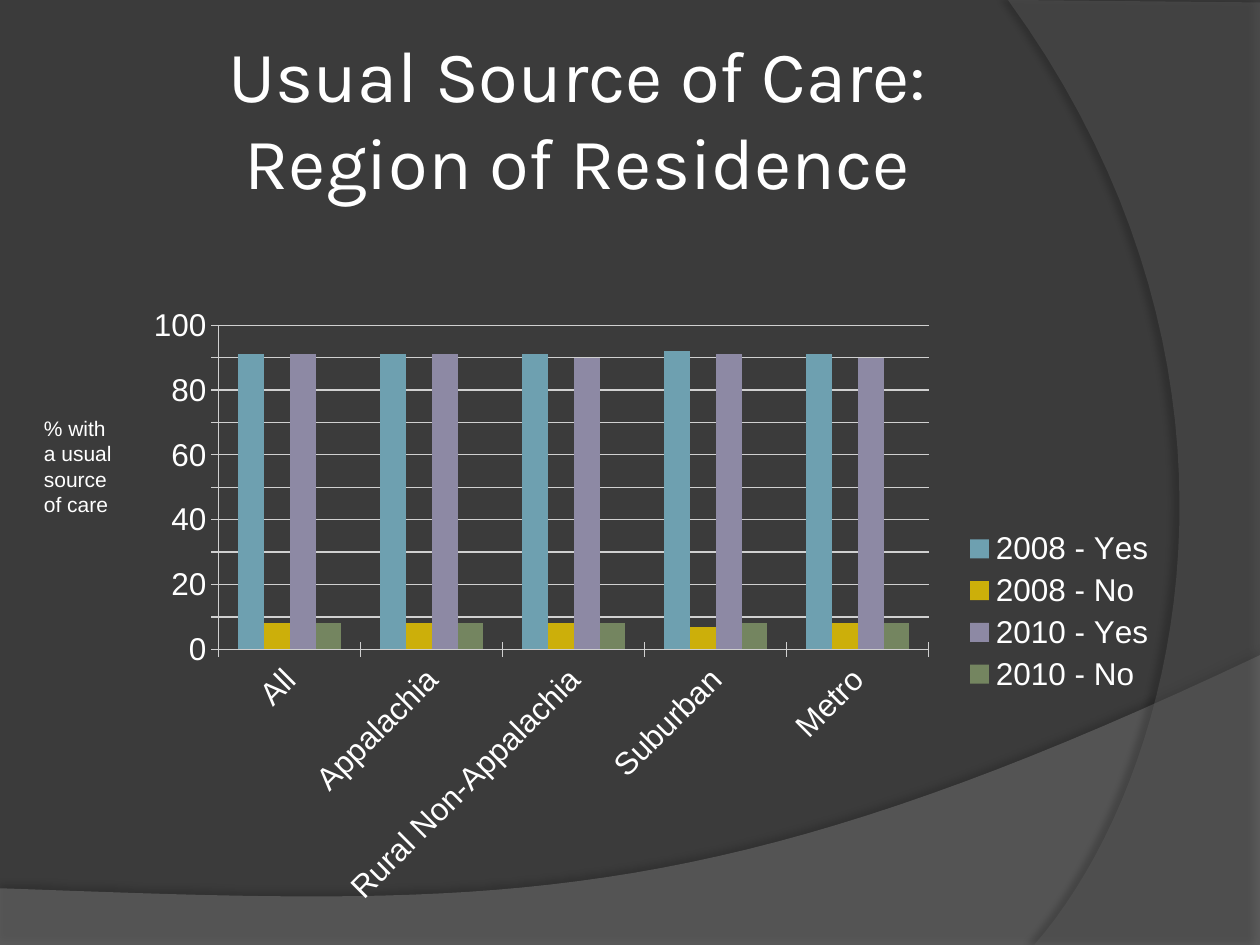
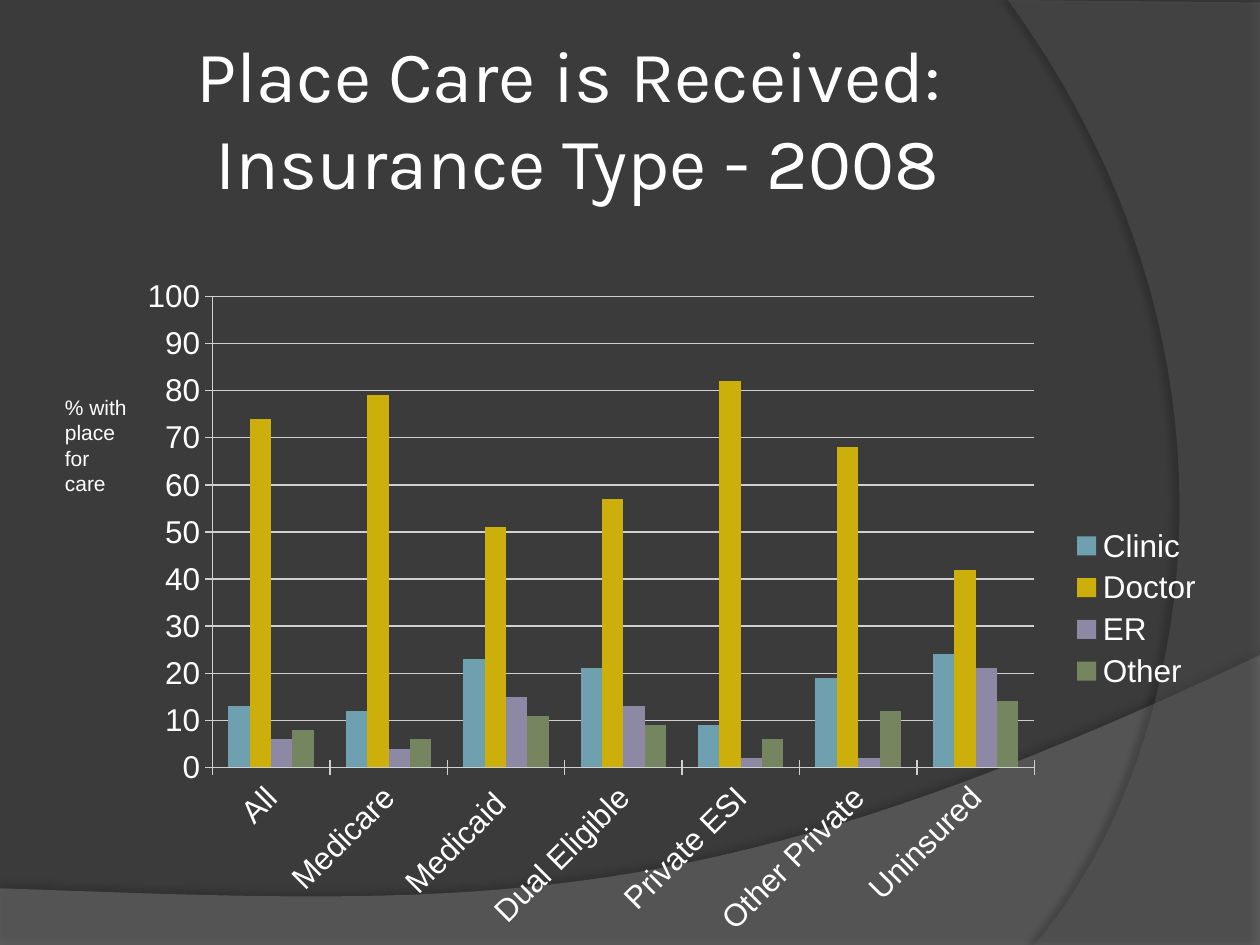
"""Build two slides of clustered column charts about sources of care."""
from lxml import etree
from pptx import Presentation
from pptx.chart.data import CategoryChartData
from pptx.dml.color import RGBColor
from pptx.enum.chart import XL_CHART_TYPE, XL_LEGEND_POSITION, XL_TICK_MARK
from pptx.enum.text import MSO_ANCHOR, MSO_AUTO_SIZE, PP_ALIGN
from pptx.oxml.ns import qn
from pptx.util import Inches, Pt

COLUMNS = XL_CHART_TYPE.COLUMN_CLUSTERED
LEGEND_RIGHT = XL_LEGEND_POSITION.RIGHT
TICK_CROSS = XL_TICK_MARK.CROSS
MIDDLE, TOP = MSO_ANCHOR.MIDDLE, MSO_ANCHOR.TOP
CENTER, LEFT = PP_ALIGN.CENTER, PP_ALIGN.LEFT
GROW, FIXED = MSO_AUTO_SIZE.SHAPE_TO_FIT_TEXT, MSO_AUTO_SIZE.NONE

GRID_PER_INCH = 12
CURVE_STEPS = 40
BACKGROUND, WHITE, AXIS_LINE = "3B3B3B", "FFFFFF", "D0D0D0"
SERIES_COLORS = ["6EA0B0", "CCAF0A", "8D89A4", "748560"]
TITLE_FONT, BODY_FONT = "Karla", "Arial"


def color(hex_value):
    return RGBColor.from_string(hex_value)


def grid(*units):
    return [Inches(unit / GRID_PER_INCH) for unit in units]


def bezier(start, first, second, end):
    for step in range(1, CURVE_STEPS + 1):
        t = step / CURVE_STEPS
        weights = ((1 - t) ** 3, 3 * t * (1 - t) ** 2, 3 * t * t * (1 - t), t ** 3)
        yield tuple(sum(w * p[axis] for w, p in zip(weights, (start, first, second, end)))
                    for axis in (0, 1))


def add_xml(parent, tag, **attributes):
    return etree.SubElement(parent, qn(tag), {k: str(v) for k, v in attributes.items()})


def set_layout(part, index, **shares):
    for old in part.findall(qn("c:layout")):
        part.remove(old)
    layout = etree.Element(qn("c:layout"))
    manual = add_xml(layout, "c:manualLayout")
    if "w" in shares:
        add_xml(manual, "c:layoutTarget", val="inner")
    for side in "xy":
        add_xml(manual, f"c:{side}Mode", val="edge")
    for side, share in shares.items():
        add_xml(manual, f"c:{side}", val=share)
    part.insert(index, layout)


class Deck:
    """Holds the shared style and the slide being built."""

    def __init__(self):
        self.prs = Presentation()
        self.prs.slide_width, self.prs.slide_height = grid(120, 90)
        self.slide = None

    def new_slide(self):
        self.slide = self.prs.slides.add_slide(self.prs.slide_layouts[6])
        backdrop = self.slide.background.fill
        backdrop.solid()
        backdrop.fore_color.rgb = color(BACKGROUND)
        wave_start, wave_end = (120, 62.4), (0, 84.6)
        wave = bezier(wave_start, (67.1, 87.5), (46.9, 86.3), wave_end)
        self.band([wave_end, (0, 90), (120, 90), wave_start, *wave],
                  "7F7F7F", 45, shade=35, distance=3.5, direction=270)
        arc_start, arc_end = (98.5, 90), (96, 0)
        arc = bezier(arc_start, (112.2, 74.3), (122.2, 36), arc_end)
        self.band([(120, 0.24), (120, 90), arc_start, *arc],
                  "5E5E5E", 40, shade=45, distance=4, direction=180)

    def band(self, outline, fill, opacity, shade, distance, direction):
        start, *rest = [grid(*point) for point in outline]
        builder = self.slide.shapes.build_freeform(*start, scale=1.0)
        builder.add_line_segments(rest, close=True)
        band = builder.convert_to_shape()
        band.fill.solid()
        band.fill.fore_color.rgb = color(fill)
        band.line.fill.background()
        band.shadow.inherit = False
        properties = band.element.spPr
        tint = properties.find(qn("a:solidFill"))[0]
        add_xml(tint, "a:alpha", val=opacity * 1000)
        shadow = add_xml(properties.find(qn("a:effectLst")), "a:outerShdw", blurRad=Pt(4),
                         dist=Pt(distance), dir=direction * 60000, rotWithShape=0)
        shadow_color = add_xml(shadow, "a:srgbClr", val="000000")
        add_xml(shadow_color, "a:alpha", val=shade * 1000)

    def style_font(self, font, size, name=BODY_FONT):
        font.size, font.name = Pt(size), name
        font.color.rgb = color(WHITE)

    def text(self, box, lines, size, name, align, anchor, autosize, side_inset):
        frame = self.slide.shapes.add_textbox(*grid(*box)).text_frame
        frame.word_wrap, frame.auto_size = True, autosize
        frame.vertical_anchor = anchor
        frame.margin_left = frame.margin_right = Inches(side_inset)
        paragraph = frame.paragraphs[0]
        paragraph.alignment = align
        for number, line in enumerate(lines):
            if number:
                paragraph.add_line_break()
            run = paragraph.add_run()
            run.text = line
            self.style_font(run.font, size, name)

    def title(self, *lines):
        self.text((6, 3.6, 98, 15), lines, 41.4, TITLE_FONT, CENTER, MIDDLE, FIXED, 0.05)

    def axis_note(self, left, top, wording):
        self.text((left, top, 9, 11), [wording], 12, BODY_FONT, LEFT, TOP, GROW, 0.1)

    def column_chart(self, box, categories, series, plot_area, legend_place):
        data = CategoryChartData()
        data.categories = categories
        for name, values in series.items():
            data.add_series(name, values)
        chart = self.slide.shapes.add_chart(COLUMNS, *grid(*box), data).chart
        chart.has_title = False
        chart.has_legend = True
        chart.legend.position = LEGEND_RIGHT
        chart.legend.include_in_layout = False
        bars = chart.plots[0]
        bars.vary_by_categories = False
        bars.gap_width, bars.overlap = 150, 0
        for column, fill in zip(bars.series, SERIES_COLORS):
            column.format.fill.solid()
            column.format.fill.fore_color.rgb = color(fill)
        percent = chart.value_axis
        percent.minimum_scale, percent.maximum_scale, percent.major_unit = 0, 100, 10
        percent.has_major_gridlines = True
        for axis in (percent, chart.category_axis):
            axis.major_tick_mark = TICK_CROSS
        for ruled in (percent, chart.category_axis, percent.major_gridlines):
            ruled.format.line.color.rgb = color(AXIS_LINE)
            ruled.format.line.width = Pt(0.75)
        for styled in (chart, chart.legend, percent.tick_labels,
                       chart.category_axis.tick_labels):
            self.style_font(styled.font, 18)
        chart.element.xpath(".//c:catAx/c:txPr/a:bodyPr")[0].set("rot", str(-45 * 60000))
        set_layout(chart.element.xpath("./c:chart/c:plotArea")[0], 0, **plot_area)
        set_layout(chart.element.xpath("./c:chart/c:legend")[0], 1, **legend_place)


def main():
    deck = Deck()

    deck.new_slide()
    deck.title("Usual Source of Care:", "Region of Residence")
    deck.column_chart(
        (13, 28, 98, 59.4),
        ["All", "Appalachia", "Rural Non-Appalachia", "Suburban", "Metro"],
        {"2008 - Yes": [91, 91, 91, 92, 91],
         "2008 - No": [8, 8, 8, 7, 8],
         "2010 - Yes": [91, 91, 90, 91, 90],
         "2010 - No": [8, 8, 8, 8, 8]},
        plot_area={"x": 0.08, "y": 0.05, "w": 0.69, "h": 0.52},
        legend_place={"x": 0.8, "y": 0.37})
    deck.axis_note(3, 39, "% with a usual source of care")

    deck.new_slide()
    deck.title("Place Care is Received: ", "Insurance Type - 2008")
    deck.column_chart(
        (12, 25, 103, 65),
        ["All", "Medicare", "Medicaid ", "Dual Eligible", "Private ESI",
         "Other Private", "Uninsured"],
        {"Clinic": [13, 12, 23, 21, 9, 19, 24],
         "Doctor": [74, 79, 51, 57, 82, 68, 42],
         "ER": [6, 4, 15, 13, 2, 2, 21],
         "Other": [8, 6, 11, 9, 6, 12, 14]},
        plot_area={"x": 0.08, "y": 0.05, "w": 0.76, "h": 0.69},
        legend_place={"x": 0.87, "y": 0.38})
    deck.axis_note(5, 37, "% with place for care")

    deck.prs.save("out.pptx")


if __name__ == "__main__":
    main()
